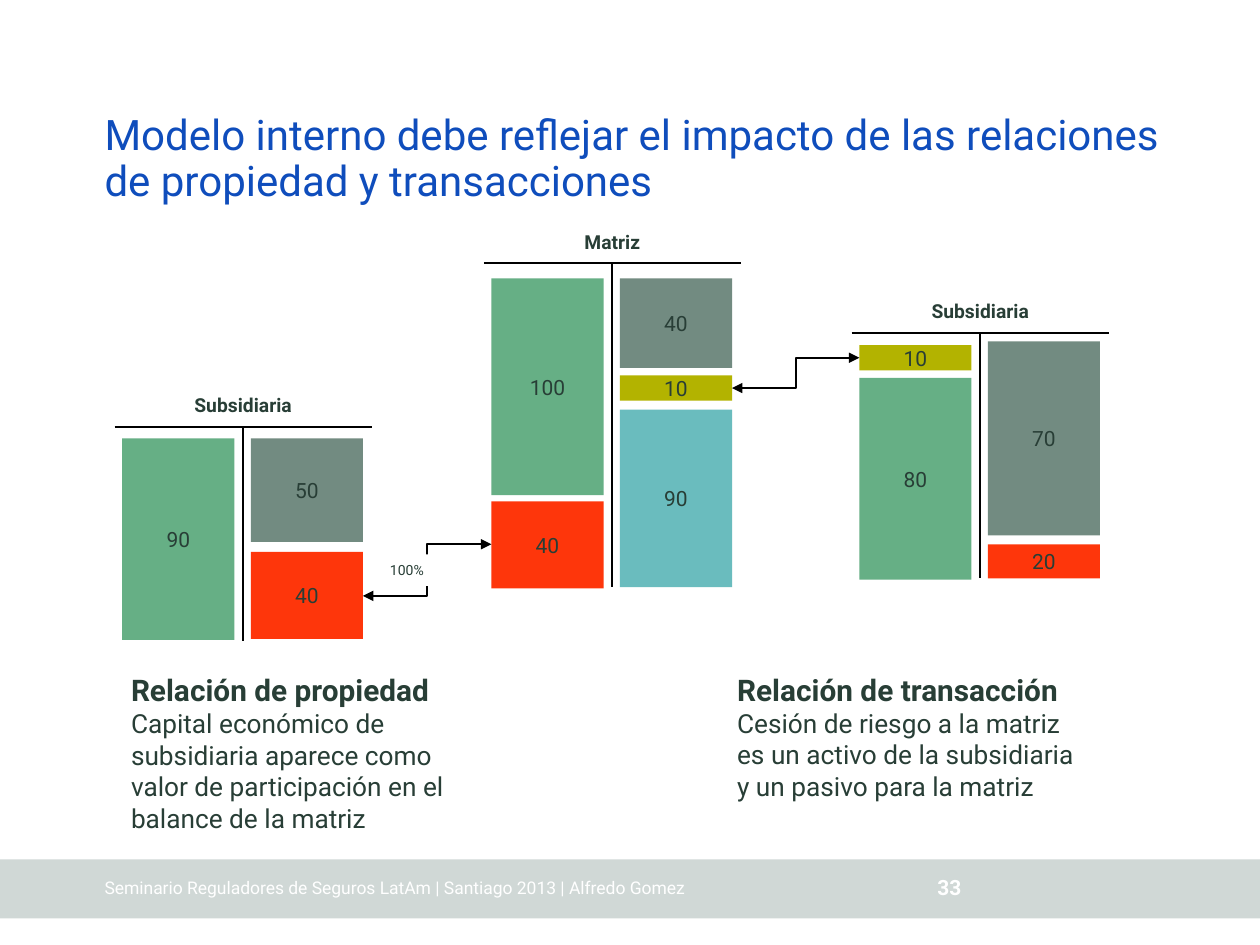
"""Build a slide on ownership and transaction relations between a parent and its subsidiaries."""
from lxml import etree
from pptx import Presentation
from pptx import util as u
from pptx.dml.color import RGBColor
from pptx.enum import shapes, text
from pptx.oxml.ns import qn

FONT = "Roboto"
COLOURS = {
    "title": "0F4DBC", "text": "283E36", "line": "000000", "white": "FFFFFF", "footer": "D0D8D6",
    "assets": "66AF85", "liabilities": "728B81", "capital": "FE360B",
    "own_capital": "6ABCBE", "transfer": "B3B300",
}
ACCOUNT_WIDTH = 2.04
BLOCK_WIDTH = 0.89
BLOCK_MARGIN = 0.06
LABEL_WIDTH, LABEL_HEIGHT = 1.02, 0.35
INSET = 0.06

ACCOUNTS = [
    ("Matriz", (3.84, 2.09, 2.57),
     [(100, 0.12, 1.72, "assets"), (40, 1.89, 0.69, "capital")],
     [(40, 0.12, 0.71, "liabilities"), (10, 0.89, 0.2, "transfer"), (90, 1.16, 1.41, "own_capital")]),
    ("Subsidiaria", (0.91, 3.39, 1.7),
     [(90, 0.09, 1.6, "assets")],
     [(50, 0.09, 0.82, "liabilities"), (40, 0.99, 0.69, "capital")]),
    ("Subsidiaria", (6.76, 2.64, 1.95),
     [(10, 0.1, 0.2, "transfer"), (80, 0.36, 1.6, "assets")],
     [(70, 0.07, 1.54, "liabilities"), (20, 1.68, 0.27, "capital")]),
]
RELATIONS = [(2.88, 4.73, 3.9, 4.32), (5.81, 3.08, 6.82, 2.84)]
EXPLANATIONS = [
    ((0.98, 5.27, 2.92, 1.41), "Relación de propiedad",
     "Capital económico de subsidiaria aparece como valor de participación en el balance de la matriz"),
    ((5.79, 5.27, 2.91, 1.16), "Relación de transacción",
     "Cesión de riesgo a la matriz es un activo de la subsidiaria y un pasivo para la matriz"),
]


def colour(name):
    """Return the named colour."""
    return RGBColor.from_string(COLOURS[name])


def format_paragraph(paragraph, size, name="text", bold=False, align=text.PP_ALIGN.LEFT):
    """Set the alignment of a paragraph and the font of its runs."""
    paragraph.alignment = align
    for run in paragraph.runs:
        run.font.name, run.font.size, run.font.bold = FONT, u.Pt(size), bold
        run.font.color.rgb = colour(name)


def set_frame(frame, anchor, inset=INSET, wrap=False):
    """Set the anchor, insets and wrapping of a text frame."""
    frame.auto_size = text.MSO_AUTO_SIZE.NONE
    frame.word_wrap = wrap
    frame.vertical_anchor = anchor
    frame.margin_left = frame.margin_right = u.Inches(inset)
    frame.margin_top = frame.margin_bottom = u.Inches(inset)


def add_text(slide, box, content, size, anchor=text.MSO_ANCHOR.MIDDLE, inset=INSET, **style):
    """Add a one-paragraph text box."""
    frame = slide.shapes.add_textbox(*map(u.Inches, box)).text_frame
    set_frame(frame, anchor, inset)
    frame.text = content
    format_paragraph(frame.paragraphs[0], size, **style)


def add_block(slide, box, fill, content="", size=12, anchor=text.MSO_ANCHOR.MIDDLE):
    """Add a filled rectangle with centred text."""
    shape = slide.shapes.add_shape(shapes.MSO_SHAPE.RECTANGLE, *map(u.Inches, box))
    shape.shadow.inherit = False
    shape.fill.solid()
    shape.fill.fore_color.rgb = colour(fill)
    shape.line.fill.background()
    set_frame(shape.text_frame, anchor)
    shape.text_frame.text = content
    format_paragraph(shape.text_frame.paragraphs[0], size, align=text.PP_ALIGN.CENTER)


def add_line(slide, ends, kind=shapes.MSO_CONNECTOR.STRAIGHT, arrows=False):
    """Add a black connector, with arrowheads at both ends if wanted."""
    connector = slide.shapes.add_connector(kind, *map(u.Inches, ends))
    connector.line.color.rgb = colour("line")
    connector.line.width = u.Pt(1.25)
    if arrows:
        for tag in ("a:headEnd", "a:tailEnd"):
            etree.SubElement(connector.line._get_or_add_ln(), qn(tag), type="triangle")
    etree.SubElement(connector._element.spPr, qn("a:effectLst"))


def add_account(slide, box, label, left_blocks, right_blocks):
    """Draw a T-account with its label and the blocks of both sides."""
    left, top, height = box
    centre = left + ACCOUNT_WIDTH / 2
    add_text(slide, (centre - LABEL_WIDTH / 2, top - LABEL_HEIGHT, LABEL_WIDTH, LABEL_HEIGHT),
             label, 11, bold=True, align=text.PP_ALIGN.CENTER)
    add_line(slide, (left, top, left + ACCOUNT_WIDTH, top))
    add_line(slide, (centre, top, centre, top + height))
    for side_left, blocks in ((left, left_blocks), (centre, right_blocks)):
        for value, offset, block_height, fill in blocks:
            add_block(slide, (side_left + BLOCK_MARGIN, top + offset, BLOCK_WIDTH, block_height),
                      fill, str(value))


def add_relations(slide):
    """Link the related blocks and label the ownership share."""
    for ends in RELATIONS:
        add_line(slide, ends, shapes.MSO_CONNECTOR.ELBOW, arrows=True)
    add_block(slide, (3.01, 4.4, 0.44, 0.25), "white", "100%", 8, text.MSO_ANCHOR.TOP)


def add_explanation(slide, box, heading, body):
    """Add a bold heading with its explanation below."""
    frame = slide.shapes.add_textbox(*map(u.Inches, box)).text_frame
    set_frame(frame, text.MSO_ANCHOR.TOP, wrap=True)
    frame.text = heading
    format_paragraph(frame.paragraphs[0], 17, bold=True)
    paragraph = frame.add_paragraph()
    paragraph.text = body
    format_paragraph(paragraph, 15)


def add_title(slide, box, content):
    """Place and format the title placeholder."""
    title = slide.shapes.title
    title.left, title.top, title.width, title.height = map(u.Inches, box)
    set_frame(title.text_frame, text.MSO_ANCHOR.BOTTOM, 0, wrap=True)
    title.text_frame.text = content
    paragraph = title.text_frame.paragraphs[0]
    paragraph.line_spacing = 0.9
    format_paragraph(paragraph, 24, "title")


def add_footer(slide, box):
    """Add the footer band with the event and the page number."""
    left, top, width, height = box
    add_block(slide, box, "footer")
    add_text(slide, (left + 0.83, top + 0.16, 6.46, 0.15),
             "Seminario Reguladores de Seguros LatAm | Santiago 2013 | Alfredo Gomez",
             10, text.MSO_ANCHOR.BOTTOM, 0, name="white")
    add_text(slide, (left + 7.44, top + 0.12, 0.2, 0.2), "33",
             12, text.MSO_ANCHOR.BOTTOM, 0, name="white", bold=True)


def main():
    """Build and save the slide."""
    presentation = Presentation()
    presentation.slide_width, presentation.slide_height = u.Inches(10), u.Inches(7.5)
    slide = presentation.slides.add_slide(presentation.slide_layouts[5])
    add_footer(slide, (0, 6.82, 10, 0.47))
    add_title(slide, (0.83, 0.68, 8.58, 0.95),
              "Modelo interno debe reflejar el impacto de las relaciones de propiedad y transacciones")
    for label, box, left_blocks, right_blocks in ACCOUNTS:
        add_account(slide, box, label, left_blocks, right_blocks)
    add_relations(slide)
    for box, heading, body in EXPLANATIONS:
        add_explanation(slide, box, heading, body)
    presentation.save("out.pptx")


if __name__ == "__main__":
    main()
